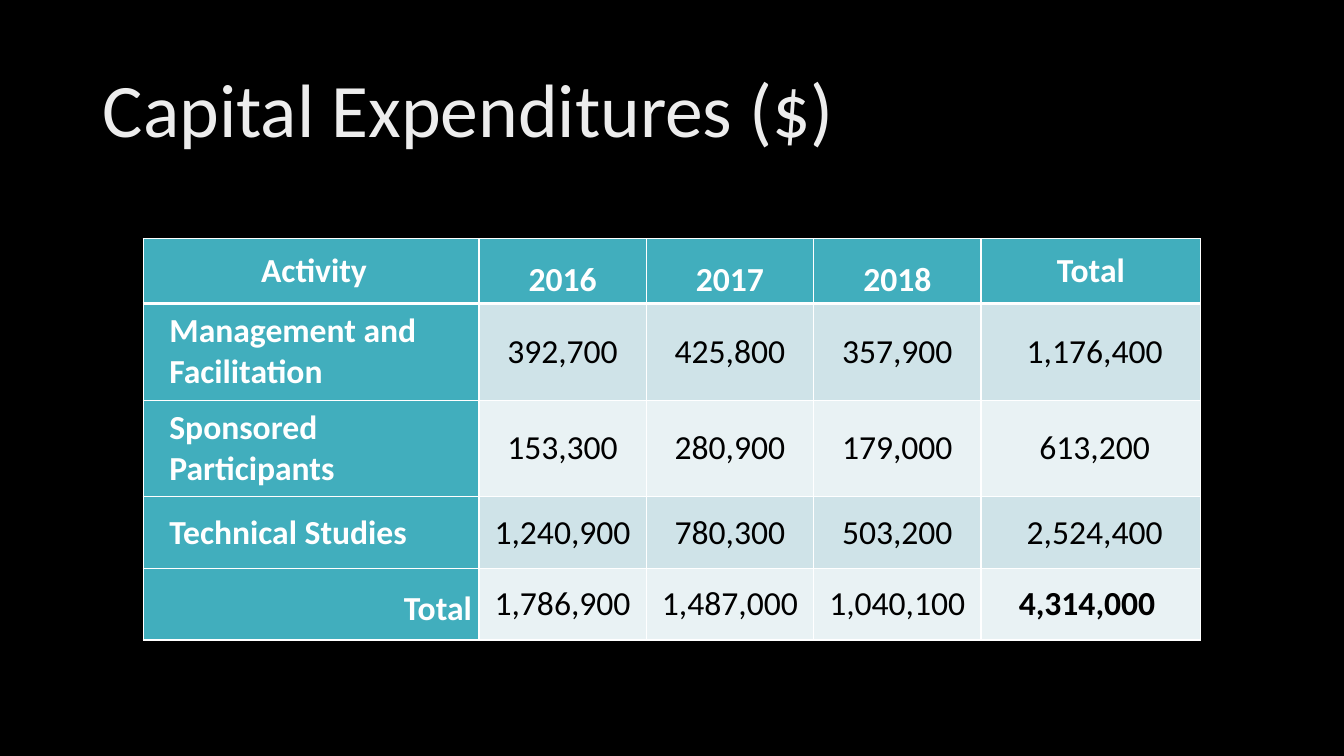
from dataclasses import dataclass

from lxml import etree
from pptx import Presentation
from pptx.dml.color import RGBColor
from pptx.enum.text import MSO_ANCHOR, PP_ALIGN
from pptx.oxml.ns import qn
from pptx.util import Inches, Pt

LEFT, CENTER, RIGHT = PP_ALIGN.LEFT, PP_ALIGN.CENTER, PP_ALIGN.RIGHT
TOP, MIDDLE = MSO_ANCHOR.TOP, MSO_ANCHOR.MIDDLE


@dataclass(frozen=True)
class Theme:
    font: str = "Calibri"
    title_size: int = 54
    table_size: int = 24
    background: str = "000000"
    title: str = "EDEDED"
    accent: str = "41AEBD"
    bands: tuple = ("CFE3E8", "E9F2F4")
    light: str = "FFFFFF"
    dark: str = "000000"
    thin: int = 1
    thick: int = 3


THEME = Theme()
COLUMN_WIDTHS = (3.33, 1.66, 1.66, 1.66, 2.18)
ROW_HEIGHTS = (0.64, 0.96, 0.96, 0.71, 0.71)
EXPENDITURES = (
    ("Activity", "2016", "2017", "2018", "Total"),
    ("Management and Facilitation", "392,700", "425,800", "357,900", " 1,176,400"),
    ("Sponsored Participants", "153,300", "280,900", "179,000", " 613,200"),
    ("Technical Studies", "1,240,900", "780,300", "503,200", " 2,524,400"),
    ("Total", "1,786,900", "1,487,000", "1,040,100", "4,314,000 "),
)


def apply(target, values):
    for name, value in values.items():
        setattr(target, name, value)


def format_font(font, size, color, bold=False):
    apply(font, {"name": THEME.font, "size": Pt(size), "bold": bold})
    font.color.rgb = RGBColor.from_string(color)


def add_title(page, box, text):
    title = page.shapes.title
    for name, value in zip(("left", "top", "width", "height"), box):
        setattr(title, name, Inches(value))
    apply(title.text_frame, {"word_wrap": True, "vertical_anchor": MIDDLE})
    para = title.text_frame.paragraphs[0]
    apply(para, {"alignment": LEFT, "line_spacing": 0.9})
    span = para.add_run()
    span.text = text
    format_font(span.font, THEME.title_size, THEME.title)


def add_borders(cell, widths):
    properties = cell._tc.get_or_add_tcPr()
    for side, width in widths.items():
        line = etree.SubElement(properties, qn(f"a:ln{side}"), w=str(Pt(width)))
        fill = etree.SubElement(line, qn("a:solidFill"))
        etree.SubElement(fill, qn("a:srgbClr"), val=THEME.light)


def format_cell(cell, text, row, column):
    last_row, last_column = len(ROW_HEIGHTS) - 1, len(COLUMN_WIDTHS) - 1
    is_header, is_label = row == 0, column == 0
    is_year = is_header and 0 < column < last_column
    is_total_label = is_label and row == last_row
    is_grand_total = row == last_row and column == last_column
    is_accent = is_header or is_label
    is_tall = is_year or is_total_label

    widths = dict.fromkeys("LRTB", THEME.thin)
    if is_header:
        widths["B"] = THEME.thick
    elif row == 1:
        widths["T"] = THEME.thick
    add_borders(cell, widths)
    cell.fill.solid()
    color = THEME.accent if is_accent else THEME.bands[(row - 1) % 2]
    cell.fill.fore_color.rgb = RGBColor.from_string(color)
    apply(cell, {
        "margin_left": Inches(0.07), "margin_right": Inches(0.07),
        "margin_top": 0, "margin_bottom": 0,
        "vertical_anchor": TOP if is_tall else MIDDLE,
    })

    para = cell.text_frame.paragraphs[0]
    para.alignment = CENTER
    if is_label and not is_header:
        para.alignment = RIGHT if is_total_label else LEFT
    if is_label:
        indent = Inches(0.06 if is_header else 0.19)
        para._p.get_or_add_pPr().set("marL", str(indent))
    if is_tall:
        para.line_spacing = 1.5
    span = para.add_run()
    span.text = text
    format_font(span.font, THEME.table_size,
                THEME.light if is_accent else THEME.dark,
                is_accent or is_grand_total)


def add_expenditures(page, left, top):
    frame = page.shapes.add_table(
        len(ROW_HEIGHTS), len(COLUMN_WIDTHS), Inches(left), Inches(top),
        Inches(sum(COLUMN_WIDTHS)), Inches(sum(ROW_HEIGHTS)))
    table = frame.table
    for column, width in zip(table.columns, COLUMN_WIDTHS):
        column.width = Inches(width)
    for row, height in zip(table.rows, ROW_HEIGHTS):
        row.height = Inches(height)
    for row, values in enumerate(EXPENDITURES):
        for column, text in enumerate(values):
            format_cell(table.cell(row, column), text, row, column)


def main():
    deck = Presentation()
    deck.slide_width, deck.slide_height = Inches(13.33), Inches(7.5)
    page = deck.slides.add_slide(deck.slide_layouts[5])
    page.background.fill.solid()
    page.background.fill.fore_color.rgb = RGBColor.from_string(THEME.background)
    add_title(page, (0.92, 0.4, 11.5, 1.45), "Capital Expenditures ($)")
    add_expenditures(page, 1.42, 2.37)
    deck.save("out.pptx")


if __name__ == "__main__":
    main()
